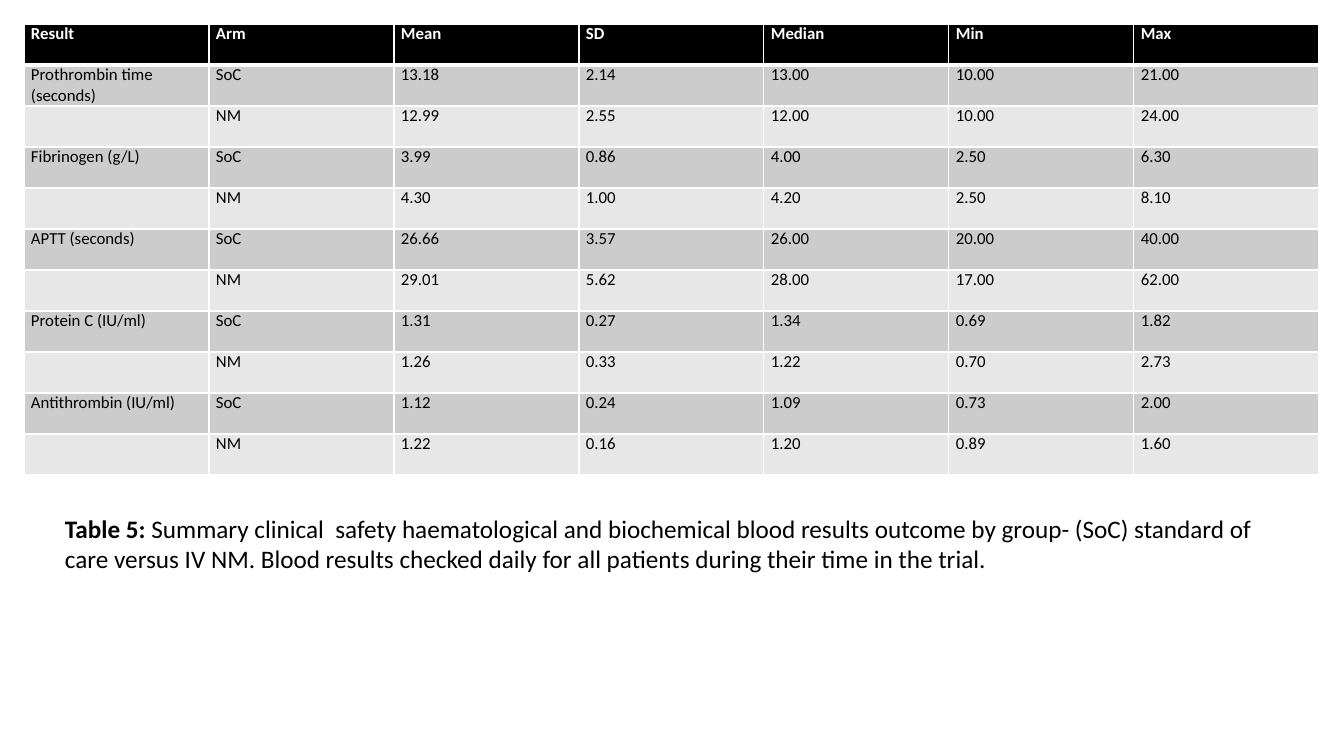
import pptx
import pptx.dml.color
import pptx.enum.text
import pptx.oxml
import pptx.oxml.ns
import pptx.util

EMU_PER_PX = 914400 / 100.8
FONT = "Calibri"
COLORS = {
    "header": "000000",
    "soc": "CCCCCC",
    "nm": "E7E7E7",
    "border": "FFFFFF",
    "header_text": "FFFFFF",
    "text": "000000",
}
HEADINGS = ["Result", "Arm", "Mean", "SD", "Median", "Min", "Max"]
RESULTS = [
    ("Prothrombin time (seconds)",
     ["13.18", "2.14", "13.00", "10.00", "21.00"],
     ["12.99", "2.55", "12.00", "10.00", "24.00"]),
    ("Fibrinogen (g/L)",
     ["3.99", "0.86", "4.00", "2.50", "6.30"],
     ["4.30", "1.00", "4.20", "2.50", "8.10"]),
    ("APTT (seconds)",
     ["26.66", "3.57", "26.00", "20.00", "40.00"],
     ["29.01", "5.62", "28.00", "17.00", "62.00"]),
    ("Protein C (IU/ml)",
     ["1.31", "0.27", "1.34", "0.69", "1.82"],
     ["1.26", "0.33", "1.22", "0.70", "2.73"]),
    ("Antithrombin (IU/ml)",
     ["1.12", "0.24", "1.09", "0.73", "2.00"],
     ["1.22", "0.16", "1.20", "0.89", "1.60"]),
]
CAPTION = (
    "Summary clinical  safety haematological and biochemical blood results "
    "outcome by group- (SoC) standard of care versus IV NM. Blood results "
    "checked daily for all patients during their time in the trial."
)


def px(length):
    return pptx.util.Emu(round(length * EMU_PER_PX))


def color(name):
    return pptx.dml.color.RGBColor.from_string(COLORS[name])


def add_span(para, text, size, color_name, bold=False):
    span = para.add_run()
    span.text = text
    span.font.name = FONT
    span.font.size = pptx.util.Pt(size)
    span.font.bold = bold
    span.font.color.rgb = color(color_name)


def set_borders(cell, bottom):
    """Draw one-point borders, with the bottom one as wide as given in points."""
    properties = cell._tc.get_or_add_tcPr()
    for side, points in (("L", 1), ("R", 1), ("T", 1), ("B", bottom)):
        properties.append(pptx.oxml.parse_xml(
            f'<a:ln{side} {pptx.oxml.ns.nsdecls("a")} w="{pptx.util.Pt(points)}">'
            f'<a:solidFill><a:srgbClr val="{COLORS["border"]}"/></a:solidFill>'
            f'</a:ln{side}>'))


def fill_row(row, texts, fill, text_color="text", bold=False, bottom=1):
    for cell, text in zip(row.cells, texts):
        set_borders(cell, bottom)
        cell.fill.solid()
        cell.fill.fore_color.rgb = color(fill)
        cell.margin_left = cell.margin_right = px(7)
        cell.margin_top = cell.margin_bottom = 0
        if text:
            add_span(cell.text_frame.paragraphs[0], text, 12, text_color, bold)


def add_results_table(page, left, top, column_width, row_height):
    row_count = 1 + 2 * len(RESULTS)
    table = page.shapes.add_table(
        row_count, len(HEADINGS), px(left), px(top),
        px(column_width * len(HEADINGS)), px(row_height * row_count)).table
    for column in table.columns:
        column.width = px(column_width)
    for row in table.rows:
        row.height = px(row_height)

    fill_row(table.rows[0], HEADINGS, "header", "header_text", bold=True, bottom=3)
    for index, (result, soc, nm) in enumerate(RESULTS):
        fill_row(table.rows[2 * index + 1], [result, "SoC", *soc], "soc")
        fill_row(table.rows[2 * index + 2], ["", "NM", *nm], "nm")


def add_caption(page, left, top, width, height):
    box = page.shapes.add_textbox(px(left), px(top), px(width), px(height))
    box.text_frame.word_wrap = True
    box.text_frame.auto_size = pptx.enum.text.MSO_AUTO_SIZE.SHAPE_TO_FIT_TEXT
    para = box.text_frame.paragraphs[0]
    add_span(para, "Table 5: ", 18, "text", bold=True)
    add_span(para, CAPTION, 18, "text")


def main():
    deck = pptx.Presentation()
    deck.slide_width, deck.slide_height = px(1344), px(756)
    page = deck.slides.add_slide(deck.slide_layouts.get_by_name("Blank"))
    add_results_table(page, left=24, top=24, column_width=185, row_height=41)
    add_caption(page, left=55, top=508, width=1226, height=102)
    deck.save("out.pptx")


if __name__ == "__main__":
    main()
